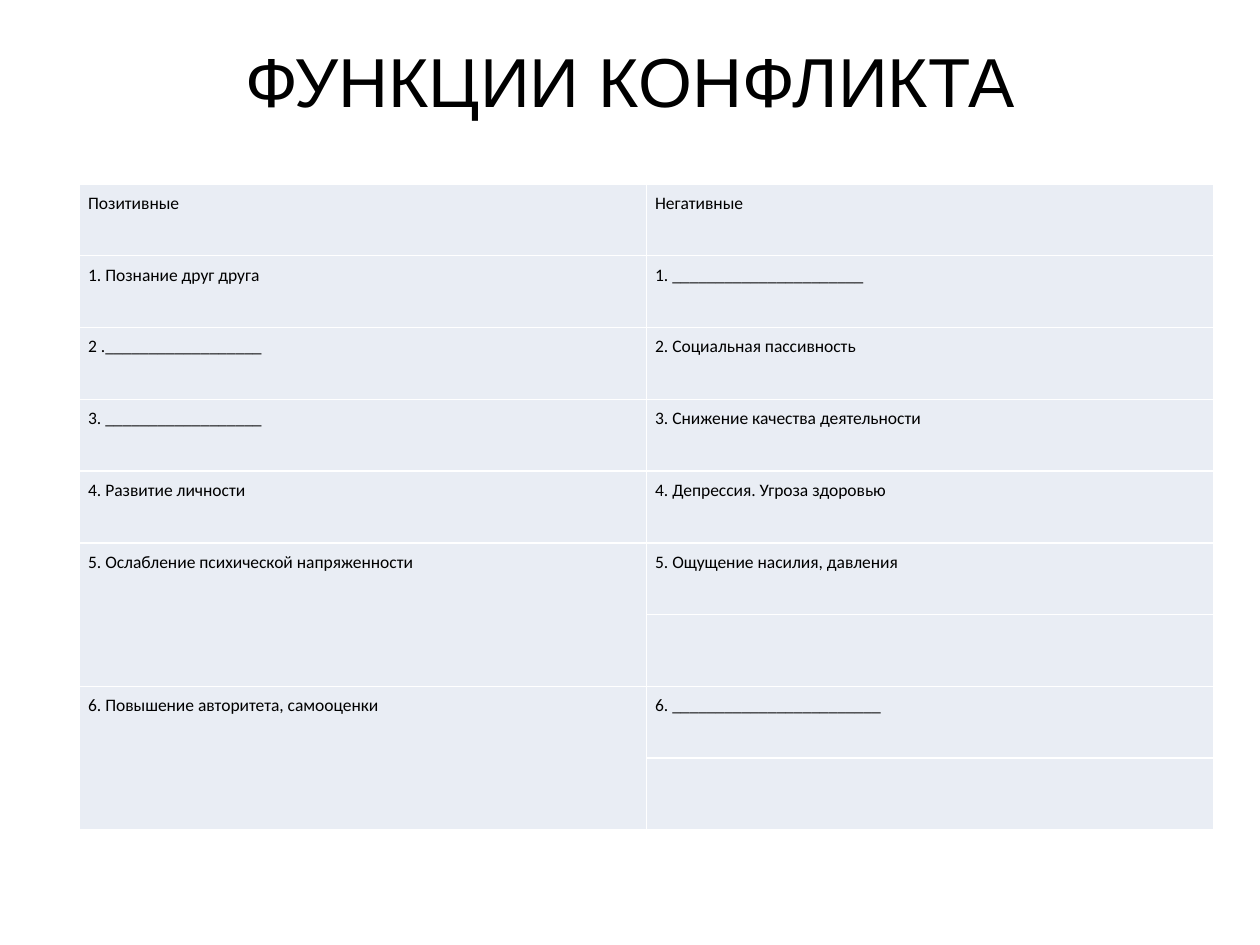
from lxml import etree
from pptx import Presentation
from pptx import util as u
from pptx.dml.color import RGBColor
from pptx.enum import text
from pptx.oxml.ns import qn

BLACK = RGBColor(0x00, 0x00, 0x00)
WHITE = RGBColor(0xFF, 0xFF, 0xFF)
PALE_BLUE = RGBColor(0xE9, 0xED, 0xF4)

# None marks a cell covered by the one above it
FUNCTIONS = [
    ("Позитивные", "Негативные"),
    ("1. Познание друг друга", "1. " + "_" * 22),
    ("2 ." + "_" * 18, "2. Социальная пассивность"),
    ("3. " + "_" * 18, "3. Снижение качества деятельности"),
    ("4. Развитие личности", "4. Депрессия. Угроза здоровью"),
    ("5. Ослабление психической напряженности", "5. Ощущение насилия, давления"),
    (None, ""),
    ("6. Повышение авторитета, самооценки", "6. " + "_" * 24),
    (None, ""),
]


class SlideBuilder:
    title_font = {"name": "Arial", "size": u.Pt(39.6), "bold": False}
    cell_font = {"name": "Calibri", "size": u.Pt(10), "bold": False}
    cell_margin = u.Inches(0.07)

    def __init__(self, slide):
        self.s = slide

    def add_text(self, p, words, font):
        r = p.add_run()
        r.text = words
        for name, value in font.items():
            setattr(r.font, name, value)
        r.font.color.rgb = BLACK

    def title(self, words, left, top, width, height):
        sp = self.s.shapes.title
        box = {"left": left, "top": top, "width": width, "height": height}
        for name, value in box.items():
            setattr(sp, name, u.Inches(value))
        tf = sp.text_frame
        frame = {"word_wrap": True, "margin_top": 0,
                 "auto_size": text.MSO_AUTO_SIZE.NONE,
                 "vertical_anchor": text.MSO_ANCHOR.TOP}
        for name, value in frame.items():
            setattr(tf, name, value)
        p = tf.paragraphs[0]
        p.alignment = text.PP_ALIGN.CENTER
        self.add_text(p, words, self.title_font)

    def borders(self, cell):
        tcPr = cell._tc.get_or_add_tcPr()
        for i, side in enumerate(("lnL", "lnR", "lnT", "lnB")):
            ln = etree.Element(qn("a:" + side), w=str(u.Pt(1)))
            fill = etree.SubElement(ln, qn("a:solidFill"))
            etree.SubElement(fill, qn("a:srgbClr"), val=str(WHITE))
            tcPr.insert(i, ln)

    def cell(self, cell, words):
        cell.fill.solid()
        cell.fill.fore_color.rgb = PALE_BLUE
        for side in ("left", "right", "top", "bottom"):
            setattr(cell, "margin_" + side, self.cell_margin)
        self.borders(cell)
        if words:
            self.add_text(cell.text_frame.paragraphs[0], words, self.cell_font)

    def table(self, rows, left, top, width, height):
        box = [u.Inches(v) for v in (left, top, width, height)]
        table = self.s.shapes.add_table(len(rows), len(rows[0]), *box).table
        table.first_row = table.horz_banding = False
        for i, row in enumerate(rows):
            for j, words in enumerate(row):
                self.cell(table.cell(i, j), words)
                if words is None:
                    table.cell(i - 1, j).merge(table.cell(i, j))


def main():
    prs = Presentation()
    prs.slide_width, prs.slide_height = u.Inches(10), u.Inches(7.5)
    builder = SlideBuilder(prs.slides.add_slide(prs.slide_layouts[5]))

    # Heading
    builder.title("ФУНКЦИИ КОНФЛИКТА", 0.5, 0.3, 9, 1.25)

    # Positive and negative functions side by side
    builder.table(FUNCTIONS, 0.63, 1.46, 9, 5.13)

    prs.save("out.pptx")


if __name__ == "__main__":
    main()
